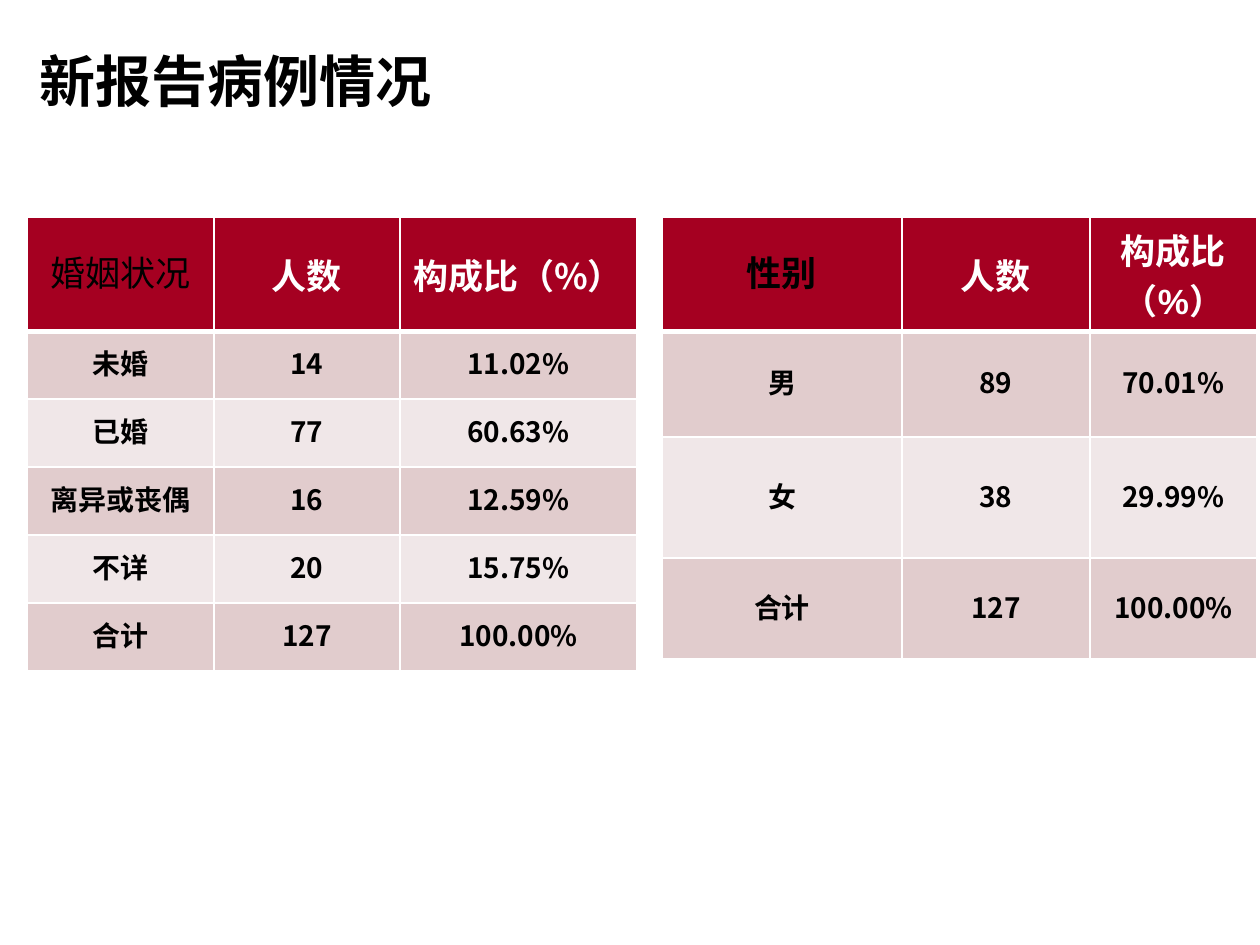
from dataclasses import dataclass

from lxml.etree import SubElement
from pptx import Presentation
from pptx.dml.color import RGBColor
from pptx.enum.text import MSO_ANCHOR as Anchor, PP_ALIGN as Align
from pptx.oxml.ns import qn
from pptx.util import Emu, Pt


@dataclass(frozen=True)
class Theme:
    header: str = "A50021"
    bands: tuple = ("E1CCCD", "F0E7E8")
    black: str = "000000"
    white: str = "FFFFFF"
    latin: str = "Arial"
    cjk: str = "Noto Sans CJK SC"
    title_size: int = 32
    header_size: int = 20
    body_size: int = 16


THEME = Theme()

MARITAL_ROWS = [
    ("婚姻状况", "人数", "构成比（%）"),
    ("未婚", "14", "11.02%"),
    ("已婚", "77", "60.63%"),
    ("离异或丧偶", "16", "12.59%"),
    ("不详", "20", "15.75%"),
    ("合计", "127", "100.00%"),
]
GENDER_ROWS = [
    ("性别", "人数", "构成比（%）"),
    ("男", "89", "70.01%"),
    ("女", "38", "29.99%"),
    ("合计", "127", "100.00%"),
]


def px(length):
    return Emu(round(length * 914400 / 126))


def write_text(frame, text, *, size, font=THEME.cjk, color=THEME.black, bold=True,
               align=Align.LEFT, line_spacing=None):
    paragraph = frame.paragraphs[0]
    paragraph.alignment = align
    paragraph.line_spacing = line_spacing
    run = paragraph.add_run()
    run.text = text
    run.font.size = Pt(size)
    run.font.bold = bold
    run.font.color.rgb = RGBColor.from_string(color)
    run.font.name = font
    SubElement(run.font._element, qn("a:ea"), typeface=THEME.cjk)


def set_borders(cell, bottom):
    """Draw white borders, to be called before the cell gets its fill."""
    properties = cell._tc.get_or_add_tcPr()
    for side, width in (("lnL", 1), ("lnR", 1), ("lnT", 1), ("lnB", bottom)):
        line = SubElement(properties, qn(f"a:{side}"), w=str(Pt(width)))
        fill = SubElement(line, qn("a:solidFill"))
        SubElement(fill, qn("a:srgbClr"), val=THEME.white)


def add_title(slide, text, left, top, width, height):
    frame = slide.shapes.add_textbox(px(left), px(top), px(width), px(height)).text_frame
    frame.word_wrap = True
    frame.vertical_anchor = Anchor.MIDDLE
    write_text(frame, text, size=THEME.title_size, font=THEME.latin, line_spacing=0.9)


def style_cell(cell, text, row, column, corner):
    is_header, is_label = row == 0, column == 0
    set_borders(cell, bottom=3 if is_header else 1)
    cell.fill.solid()
    fill = THEME.header if is_header else THEME.bands[(row - 1) % 2]
    cell.fill.fore_color.rgb = RGBColor.from_string(fill)
    cell.vertical_anchor = Anchor.MIDDLE
    if is_label or not is_header:
        cell.margin_left = cell.margin_right = cell.margin_top = px(1)
        cell.margin_bottom = px(6)
    style = {"size": THEME.body_size, "font": THEME.latin if is_label else THEME.cjk}
    if is_header:
        style = {"size": THEME.header_size, **corner}
        if not is_label:
            style.update(color=THEME.white, bold=True)
    write_text(cell.text_frame, text, align=Align.CENTER, **style)


def add_case_table(slide, rows, left, top, widths, heights, corner):
    """Add a banded table; corner formats the first header cell."""
    table = slide.shapes.add_table(
        len(rows), len(widths), px(left), px(top), px(sum(widths)), px(sum(heights))
    ).table
    for column, width in zip(table.columns, widths):
        column.width = px(width)
    for row, height in zip(table.rows, heights):
        row.height = px(height)
    for row, texts in enumerate(rows):
        for column, text in enumerate(texts):
            style_cell(table.cell(row, column), text, row, column, corner)


def main():
    presentation = Presentation()
    presentation.slide_width, presentation.slide_height = px(1260), px(945)
    slide = presentation.slides.add_slide(presentation.slide_layouts[6])
    add_case_table(slide, MARITAL_ROWS, 27, 217, [187, 186, 237], [103] + [68] * 5,
                   {"font": THEME.cjk, "bold": False})
    add_case_table(slide, GENDER_ROWS, 662, 217, [240, 188, 167], [113, 106, 121, 101],
                   {"font": THEME.latin, "bold": True})
    add_title(slide, "新报告病例情况", 27, 19, 493, 130)
    presentation.save("out.pptx")


if __name__ == "__main__":
    main()
